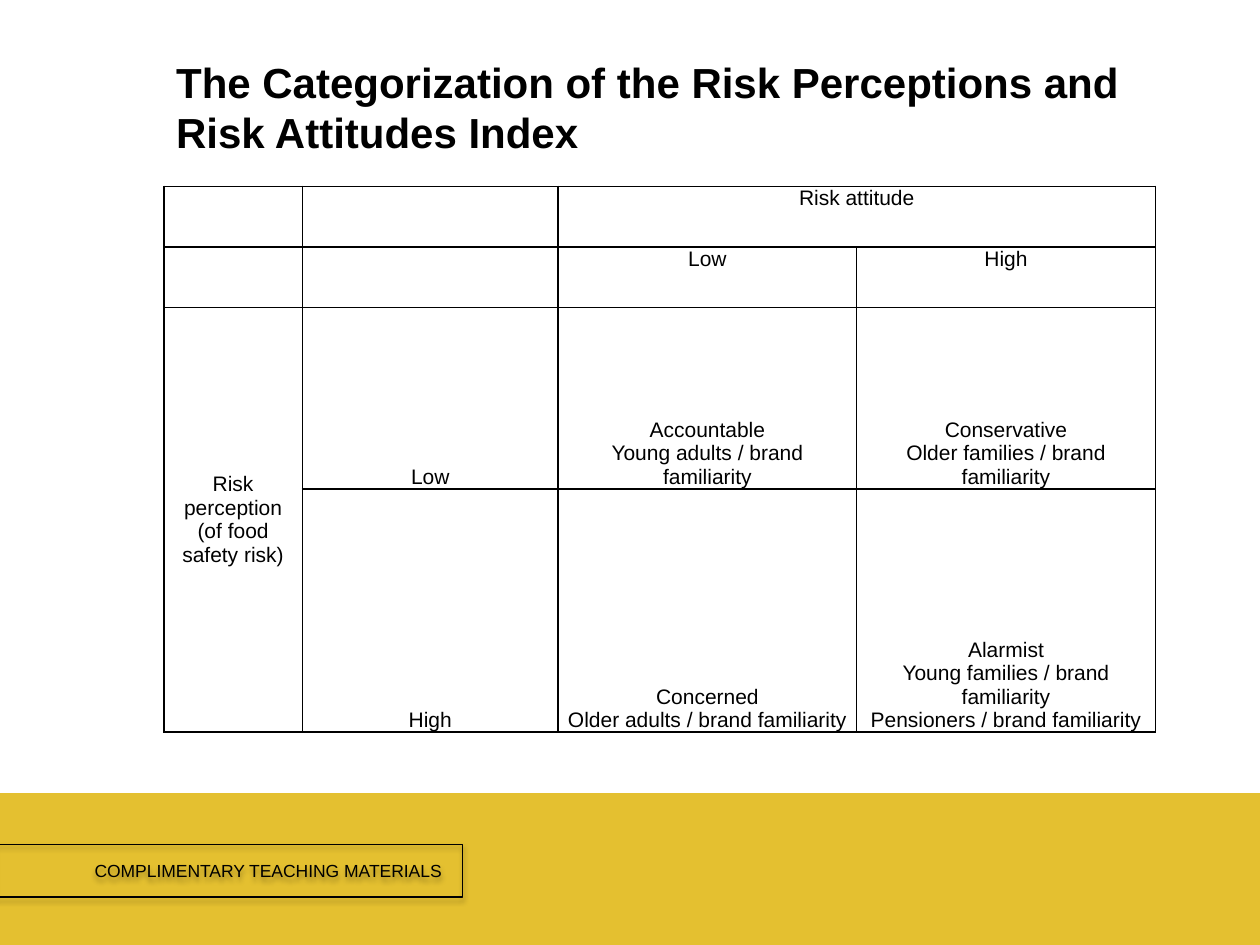
import pptx
import pptx.dml.color
import pptx.enum.shapes
import pptx.enum.text
import pptx.oxml
import pptx.oxml.ns
import pptx.util

Inches, Pt = pptx.util.Inches, pptx.util.Pt
ANCHOR = pptx.enum.text.MSO_ANCHOR
ALIGN = pptx.enum.text.PP_ALIGN
RECT = pptx.enum.shapes.MSO_SHAPE.RECTANGLE

# Content
TITLE = "The Categorization of the Risk Perceptions and Risk Attitudes Index"
FOOTER = "COMPLIMENTARY TEACHING MATERIALS"
ROWS = [
    ["", "", "Risk attitude", ""],
    ["", "", "Low", "High"],
    ["Risk perception (of food safety risk)", "Low",
     "Accountable\nYoung adults / brand familiarity",
     "Conservative\nOlder families / brand familiarity"],
    ["", "High",
     "Concerned\nOlder adults / brand familiarity",
     "Alarmist\nYoung families / brand familiarity\nPensioners / brand familiarity"],
]
MERGES = [((0, 2), (0, 3)), ((2, 0), (3, 0))]
COL_WIDTHS = [1.1, 2.03, 2.37, 2.37]
ROW_HEIGHTS = [0.48, 0.48, 1.44, 1.93]
HEADER_ROWS = 2

THEME = {"font": "Arial", "ink": "000000", "band": "E4C030",
         "title": 24, "table": 12, "footer": 10}


def rgb(name):
    return pptx.dml.color.RGBColor.from_string(THEME[name])


def xml(tag, attrs, inner):
    return pptx.oxml.parse_xml(
        f'<a:{tag} {pptx.oxml.ns.nsdecls("a")} {attrs}>{inner}</a:{tag}>')


def style(tf, size, align=ALIGN.LEFT, bold=False):
    for p in tf.paragraphs:
        p.alignment = align
        p.font.size = Pt(THEME[size])
        for r in p.runs:
            r.font.name = THEME["font"]
            r.font.size = Pt(THEME[size])
            r.font.bold = bold
            r.font.color.rgb = rgb("ink")


def add_rect(s, box, line, width):
    sp = s.shapes.add_shape(RECT, *map(Inches, box))
    sp.shadow.inherit = False
    sp.fill.background()
    sp.line.color.rgb = rgb(line)
    sp.line.width = Pt(width)
    return sp


def add_borders(cell):
    fill = f'<a:solidFill><a:srgbClr val="{THEME["ink"]}"/></a:solidFill>'
    tc_pr = cell._tc.get_or_add_tcPr()
    for i, tag in enumerate(("lnL", "lnR", "lnT", "lnB")):
        tc_pr.insert(i, xml(tag, f'w="{Pt(1)}"', fill))


prs = pptx.Presentation()
prs.slide_width, prs.slide_height = Inches(10), Inches(7.5)
s = prs.slides.add_slide(prs.slide_layouts[6])

# Bottom band
band = add_rect(s, (0, 6.31, 10, 1.19), "band", 2)
band.fill.solid()
band.fill.fore_color.rgb = rgb("band")

# Footer label with a soft shadow
label = add_rect(s, (-0.04, 6.7, 3.71, 0.42), "ink", 0.75)
label._element.spPr.find(pptx.oxml.ns.qn("a:effectLst")).append(xml(
    "outerShdw",
    f'blurRad="{Pt(3.1)}" dist="{Pt(1.8)}" dir="5400000" rotWithShape="0"',
    f'<a:srgbClr val="{THEME["ink"]}"><a:alpha val="35000"/></a:srgbClr>'))
tf = label.text_frame
tf.text = FOOTER
tf.word_wrap = True
tf.margin_left = Inches(0.79)
tf.vertical_anchor = ANCHOR.MIDDLE
style(tf, "footer")

# Risk matrix
table = s.shapes.add_table(
    len(ROWS), len(COL_WIDTHS), Inches(1.3), Inches(1.48),
    Inches(sum(COL_WIDTHS)), Inches(sum(ROW_HEIGHTS))).table
table.first_row = table.horz_banding = False
for col, width in zip(table.columns, COL_WIDTHS):
    col.width = Inches(width)
for row, height in zip(table.rows, ROW_HEIGHTS):
    row.height = Inches(height)
for i, row in enumerate(ROWS):
    for j, text in enumerate(row):
        cell = table.cell(i, j)
        cell.text_frame.text = text
        cell.margin_left = cell.margin_right = Inches(0.07)
        cell.margin_top = cell.margin_bottom = 0
        if i < HEADER_ROWS:
            cell.vertical_anchor = ANCHOR.TOP
        else:
            cell.vertical_anchor = ANCHOR.BOTTOM if j else ANCHOR.MIDDLE
        cell.fill.background()
        add_borders(cell)
        style(cell.text_frame, "table", ALIGN.CENTER)
for first, last in MERGES:
    table.cell(*first).merge(table.cell(*last))

# Title
tf = s.shapes.add_textbox(*map(Inches, (1.3, 0.3, 7.87, 1.09))).text_frame
tf.text = TITLE
tf.word_wrap = True
tf.vertical_anchor = ANCHOR.MIDDLE
style(tf, "title", bold=True)

prs.save("out.pptx")
